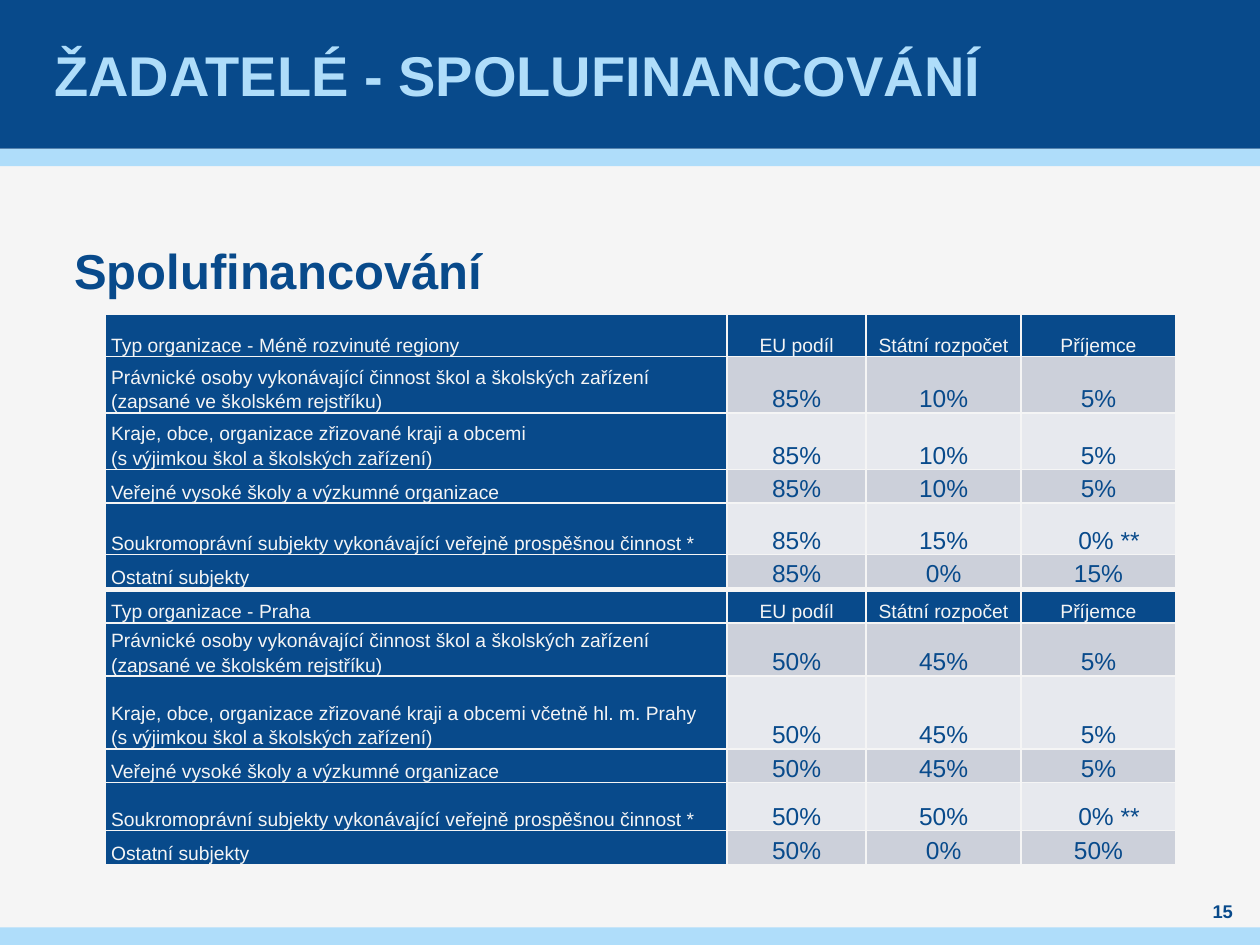
import copy
import dataclasses

import lxml.etree
import pptx
import pptx.dml.color
import pptx.enum.shapes
import pptx.enum.text
import pptx.oxml.ns
import pptx.util

Pt = pptx.util.Pt
Align = pptx.enum.text.PP_ALIGN
Anchor = pptx.enum.text.MSO_ANCHOR


@dataclasses.dataclass(frozen=True)
class Theme:
    """Colours, font and type sizes of the deck."""
    navy: str = "084A8B"
    sky: str = "AFDDFA"
    paper: str = "F5F5F5"
    bands: tuple = ("CCD0DA", "E7E9EE")
    font: str = "Arial"
    title: float = 32
    heading: float = 28
    share: float = 14
    label: float = 11
    number: float = 10.5


THEME = Theme()
COLUMNS = (355.5, 79.5, 88.5, 88.5)
HEADINGS = ("EU podíl", "Státní rozpočet", "Příjemce")
SCHOOLS = ("Právnické osoby vykonávající činnost škol a školských zařízení "
           "(zapsané ve školském rejstříku)")
UNIVERSITIES = "Veřejné vysoké školy a výzkumné organizace"
PRIVATE = "Soukromoprávní subjekty vykonávající veřejně prospěšnou činnost *"
OTHERS = "Ostatní subjekty"

REGIONS_ROWS = (
    ("Typ organizace - Méně rozvinuté regiony", *HEADINGS),
    (SCHOOLS, "85%", "10%", "5%"),
    ("Kraje, obce, organizace zřizované kraji a obcemi"
     "\v(s výjimkou škol a školských zařízení)", "85%", "10%", "5%"),
    (UNIVERSITIES, "85%", "10%", "5%"),
    (PRIVATE, "85%", "15%", "0% **"),
    (OTHERS, "85%", "0%", "15%"),
)
PRAGUE_ROWS = (
    ("Typ organizace - Praha", *HEADINGS),
    (SCHOOLS, "50%", "45%", "5%"),
    ("Kraje, obce, organizace zřizované kraji a obcemi včetně hl. m. Prahy"
     "\v(s výjimkou škol a školských zařízení)", "50%", "45%", "5%"),
    (UNIVERSITIES, "50%", "45%", "5%"),
    (PRIVATE, "50%", "50%", "0% **"),
    (OTHERS, "50%", "0%", "50%"),
)


def rgb(colour):
    """Turn a hex string into a colour."""
    return pptx.dml.color.RGBColor.from_string(colour)


def style_paragraph(para, size, colour, bold, align=Align.LEFT):
    """Format every run and line break of a paragraph."""
    para.alignment = align
    for span in para.runs:
        span.font.name = THEME.font
        span.font.size = Pt(size)
        span.font.bold = bold
        span.font.color.rgb = rgb(colour)
    for line_break in para._p.findall(pptx.oxml.ns.qn("a:br")):
        line_break.append(copy.deepcopy(para.runs[0]._r.rPr))


def add_band(page, box, colour):
    """Draw a plain filled rectangle."""
    band = page.shapes.add_shape(
        pptx.enum.shapes.MSO_SHAPE.RECTANGLE, *map(Pt, box))
    band.shadow.inherit = False
    band.fill.solid()
    band.fill.fore_color.rgb = rgb(colour)
    band.line.fill.background()


def add_text(page, box, text, size, colour, anchor=Anchor.TOP,
             align=Align.LEFT, inset=0):
    """Place one bold line of text and return its paragraph."""
    frame = page.shapes.add_textbox(*map(Pt, box)).text_frame
    frame.word_wrap = True
    frame.vertical_anchor = anchor
    frame.margin_left = frame.margin_right = Pt(inset)
    frame.margin_top = frame.margin_bottom = 0
    frame.text = text
    para = frame.paragraphs[0]
    style_paragraph(para, size, colour, True, align)
    return para


def add_header(page, box):
    """Draw the title bar with its stripe below."""
    left, top, width, height = box
    add_band(page, (left, top + height, width, 10), THEME.sky)
    add_band(page, box, THEME.navy)
    add_text(page, (left + 28, top, width - 57, height),
             "ŽADATELÉ - SPOLUFINANCOVÁNÍ", THEME.title, THEME.sky,
             Anchor.MIDDLE, inset=3)


def add_heading(page, box):
    """Place the section heading."""
    para = add_text(page, box, "Spolufinancování", THEME.heading, THEME.navy)
    para.line_spacing = Pt(28.8)
    para.space_before = para.space_after = Pt(6)


def add_footer(page, box):
    """Draw the bottom stripe with the page number above it."""
    left, top, width, height = box
    add_band(page, box, THEME.sky)
    add_text(page, (left + width - 39.5, top - 16.5, 36.5, 14.5), "15",
             THEME.number, THEME.navy, Anchor.MIDDLE, Align.CENTER)


def add_borders(cell):
    """Give a cell thin paper-coloured borders on all sides."""
    properties = cell._tc.get_or_add_tcPr()
    for side in ("a:lnL", "a:lnR", "a:lnT", "a:lnB"):
        line = lxml.etree.SubElement(
            properties, pptx.oxml.ns.qn(side), w=str(Pt(1)))
        fill = lxml.etree.SubElement(line, pptx.oxml.ns.qn("a:solidFill"))
        lxml.etree.SubElement(
            fill, pptx.oxml.ns.qn("a:srgbClr"), val=THEME.paper)


def fill_cell(cell, text, row, column):
    """Write and format one cell according to its place in the table."""
    is_label = row == 0 or column == 0
    add_borders(cell)
    cell.fill.solid()
    cell.fill.fore_color.rgb = rgb(
        THEME.navy if is_label else THEME.bands[(row - 1) % 2])
    cell.vertical_anchor = Anchor.BOTTOM
    cell.margin_left = Pt(15.5 if text.endswith("**") else 3.5)
    cell.margin_right = Pt(3.5)
    cell.margin_top = cell.margin_bottom = 0
    cell.text_frame.text = text
    para = cell.text_frame.paragraphs[0]
    para.line_spacing = 1.15
    style_paragraph(para,
                    THEME.label if is_label else THEME.share,
                    THEME.paper if is_label else THEME.navy,
                    False,
                    Align.CENTER if column else Align.LEFT)


def add_share_table(page, box, rows, heights):
    """Build a table of funding shares by type of organisation."""
    table = page.shapes.add_table(
        len(rows), len(COLUMNS), *map(Pt, box)).table
    for column, width in zip(table.columns, COLUMNS):
        column.width = Pt(width)
    for row, height in zip(table.rows, heights):
        row.height = Pt(height)
    for row, texts in enumerate(rows):
        for column, text in enumerate(texts):
            fill_cell(table.cell(row, column), text, row, column)


def build_funding_slide(deck, box):
    """Lay out the co-financing slide in the given box."""
    left, top, width, height = box
    page = deck.slides.add_slide(deck.slide_layouts[6])
    page.background.fill.solid()
    page.background.fill.fore_color.rgb = rgb(THEME.paper)
    add_header(page, (left, top, width, 85))
    add_heading(page, (left + 42.5, top + 142, width - 85, 366.5))
    add_footer(page, (left, top + height - 10, width, 10))
    add_share_table(page, (left + 60, top + 179.75, 612, 155),
                    REGIONS_ROWS, (24, 32.25, 32.25, 18.5, 29.25, 18.5))
    add_share_table(page, (left + 60, top + 338, 612, 151),
                    PRAGUE_ROWS, (18, 28, 41.5, 18, 27.5, 18))


def main():
    """Create and save the deck."""
    deck = pptx.Presentation()
    deck.slide_width, deck.slide_height = Pt(720), Pt(540)
    build_funding_slide(deck, (0, 0, 720, 540))
    deck.save("out.pptx")


if __name__ == "__main__":
    main()
